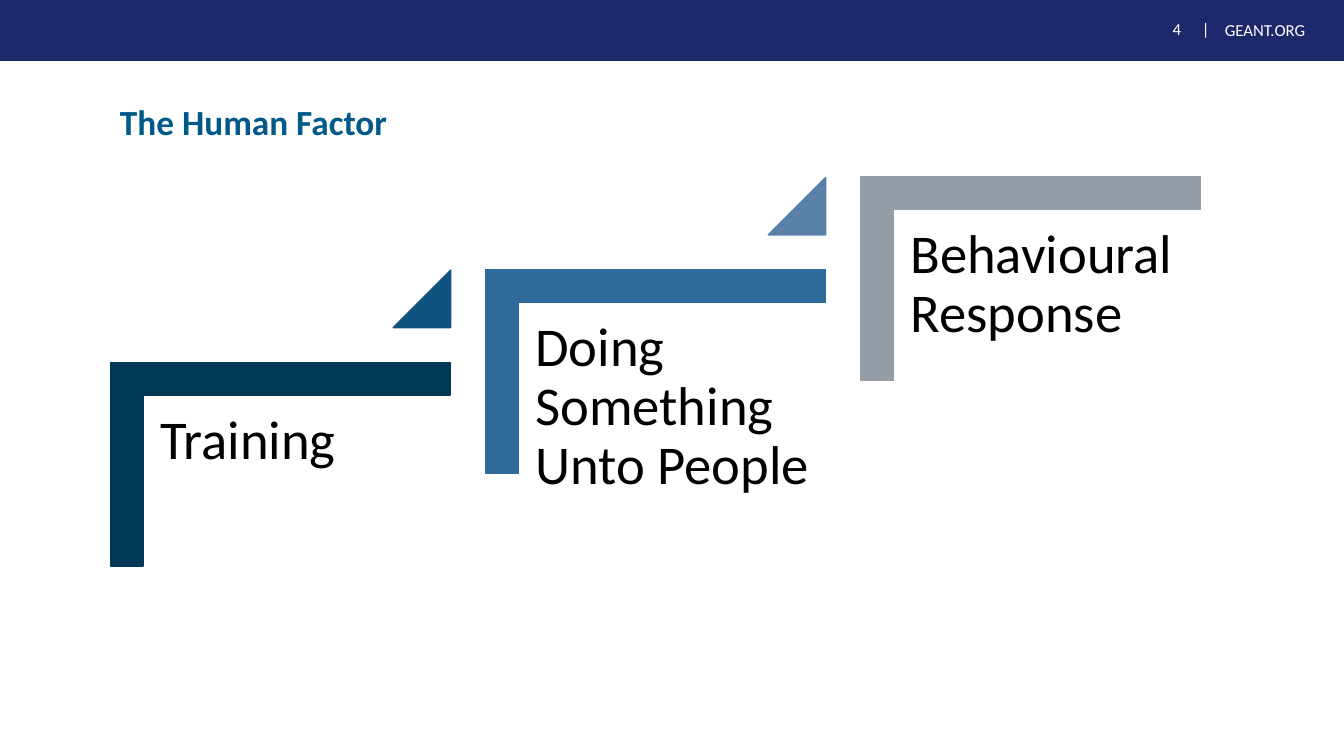
import pptx
import pptx.util
import pptx.dml.color
import pptx.enum.shapes
import pptx.enum.text
import pptx.oxml.ns
import lxml.etree

Inches = pptx.util.Inches
SHAPE = pptx.enum.shapes.MSO_SHAPE
TEXT = pptx.enum.text

HEAD = {"size": pptx.util.Pt(12), "name": "Calibri"}
TITLE = {"size": pptx.util.Pt(25.2), "name": "Calibri", "bold": True}
LABEL = {"size": pptx.util.Pt(39), "name": "Calibri"}

# label, corner colour, colour of the triangle that leads to the next step
STEPS = [
    ("Training", "003855", "10537E"),
    ("Doing Something Unto People", "2E6A9A", "5981A8"),
    ("Behavioural Response", "959DA6", None),
]
STEP_X, STEP_Y = 3.72, -0.92


def paint(color, tone):
    color.rgb = pptx.dml.color.RGBColor.from_string(tone)


def add_solid(slide, kind, box, tone, adjust=(), turn=0):
    """Add a preset shape whose line matches its fill."""
    shape = slide.shapes.add_shape(kind, *map(Inches, box))
    shape.shadow.inherit = False
    shape.rotation = turn
    shape.fill.solid()
    paint(shape.fill.fore_color, tone)
    paint(shape.line.color, tone)
    shape.line.width = pptx.util.Pt(1)
    for i, value in enumerate(adjust):
        shape.adjustments[i] = value


def write(shape, text, style, tone, anchor, inset=None, tab=None):
    """Fill a text shape with one left-aligned paragraph."""
    frame = shape.text_frame
    frame.word_wrap = True
    frame.auto_size = TEXT.MSO_AUTO_SIZE.NONE
    frame.vertical_anchor = anchor
    if inset is not None:
        for side in ("left", "top", "right", "bottom"):
            setattr(frame, f"margin_{side}", Inches(inset))
    frame.text = text
    para = frame.paragraphs[0]
    para.alignment = TEXT.PP_ALIGN.LEFT
    para.line_spacing = 0.9
    if tab is not None:
        qn = pptx.oxml.ns.qn
        stops = lxml.etree.SubElement(para._p.get_or_add_pPr(), qn("a:tabLst"))
        lxml.etree.SubElement(stops, qn("a:tab"), pos=str(Inches(tab)), algn="l")
    for key, value in style.items():
        setattr(para.font, key, value)
    paint(para.font.color, tone)


def add_text(slide, box, *args, **extra):
    write(slide.shapes.add_textbox(*map(Inches, box)), *args, **extra)


def add_header(slide):
    middle = TEXT.MSO_ANCHOR.MIDDLE
    add_solid(slide, SHAPE.RECTANGLE, (0, 0, 13.33, 0.6), "1D286B")
    add_text(slide, (11.63, 0.12, 0.46, 0.36), "4\t|", HEAD, "FFFFFF",
             middle, inset=0, tab=0.29)
    add_text(slide, (12.05, 0.15, 1.28, 0.32), "GEANT.ORG", HEAD, "FFFFFF", middle)


def add_title(slide):
    title = slide.shapes.title
    place = dict(left=1.09, top=1, width=10.82, height=0.47)
    for key, value in place.items():
        setattr(title, key, Inches(value))
    write(title, "The Human Factor", TITLE, "005988", TEXT.MSO_ANCHOR.MIDDLE)


def add_step(slide, index, label, tone, link):
    x, y = index * STEP_X, index * STEP_Y
    add_solid(slide, SHAPE.CORNER, (1.77 + x, 2.92 + y, 2.02, 3.37), tone,
              (0.16, 0.16), 90)
    add_text(slide, (1.43 + x, 3.93 + y, 3.04, 2.67), label, LABEL, "000000",
             TEXT.MSO_ANCHOR.TOP, inset=0.16)
    if link:
        add_solid(slide, SHAPE.ISOSCELES_TRIANGLE,
                  (3.9 + x, 2.68 + y, 0.57, 0.57), link, (1,))


def main():
    deck = pptx.Presentation()
    deck.slide_width, deck.slide_height = Inches(13.33), Inches(7.5)
    slide = deck.slides.add_slide(deck.slide_layouts.get_by_name("Title Only"))
    add_header(slide)
    add_title(slide)
    for index, step in enumerate(STEPS):
        add_step(slide, index, *step)
    deck.save("out.pptx")


if __name__ == "__main__":
    main()
